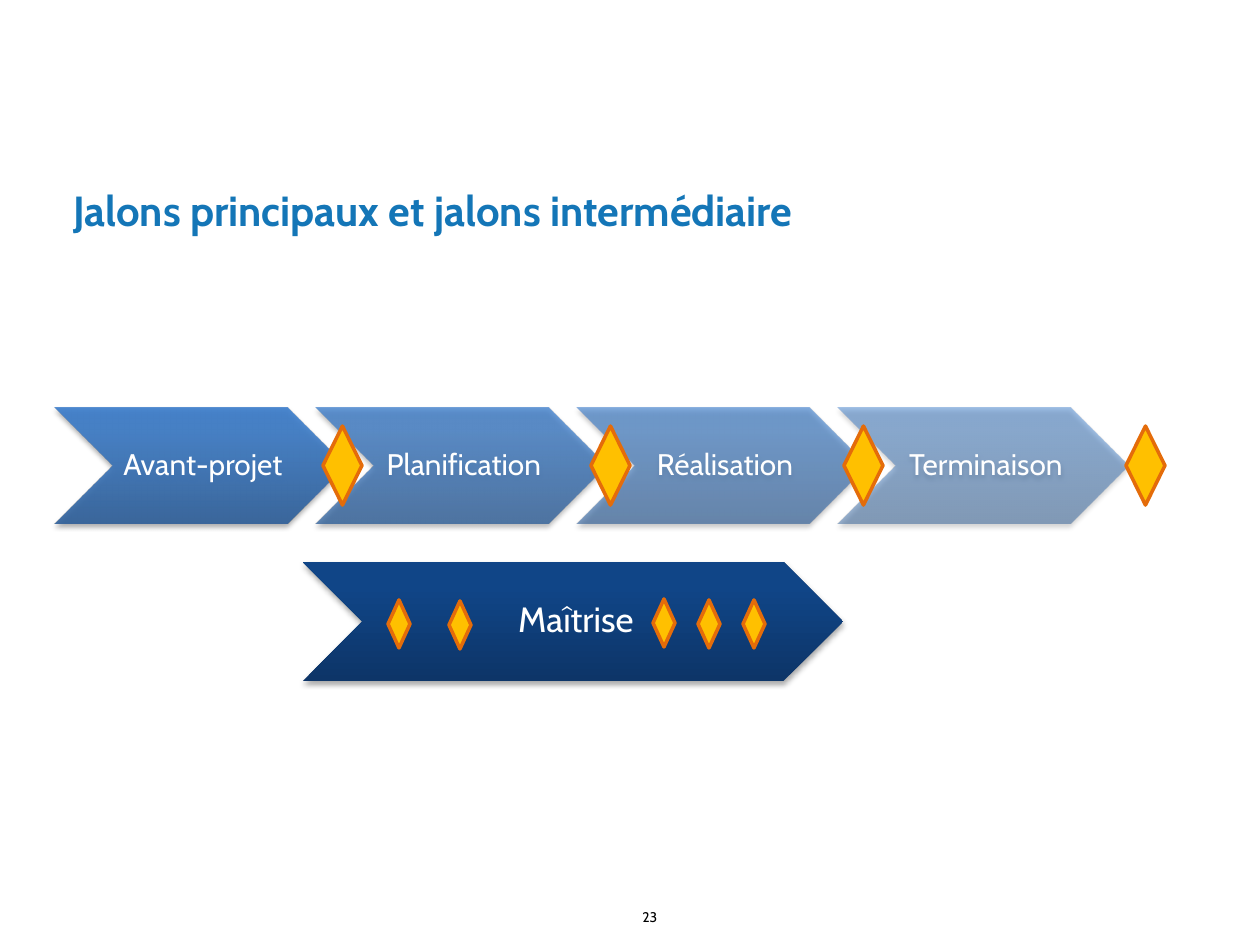
import dataclasses

import lxml.etree
import pptx
import pptx.dml.color
import pptx.enum.shapes
import pptx.enum.text
import pptx.oxml.ns
import pptx.util

RGB = pptx.dml.color.RGBColor
SHAPE = pptx.enum.shapes.MSO_SHAPE
ALIGN = pptx.enum.text.PP_ALIGN
MIDDLE = pptx.enum.text.MSO_ANCHOR.MIDDLE
qn = pptx.oxml.ns.qn

FONT = "Cabin"
WHITE = RGB(0xFF, 0xFF, 0xFF)
BLACK = RGB(0x00, 0x00, 0x00)
TITLE = RGB(0x14, 0x76, 0xB7)
GOLD = RGB(0xFF, 0xC0, 0x00)
ORANGE = RGB(0xE4, 0x6C, 0x0A)
BLUE = ((0, RGB(0x2F, 0x5F, 0x99)), (80, RGB(0x3D, 0x7C, 0xC7)),
        (100, RGB(0x3A, 0x7C, 0xCB)))
NAVY = ((0, RGB(0x0D, 0x35, 0x68)), (80, RGB(0x10, 0x45, 0x87)),
        (100, RGB(0x0E, 0x45, 0x8A)))
SCALE = 914400 / 126  # EMU in one px


@dataclasses.dataclass
class Phase:
    name: str
    box: tuple[int, int, int, int]
    stops: tuple
    alpha: int
    size: int


@dataclasses.dataclass
class Mark:
    left: int
    top: int
    width: int
    height: int


def px(num: int) -> int:
    return round(num * SCALE)


def add_color(node, tone: RGB, alpha: int) -> None:
    clr = lxml.etree.SubElement(node, qn("a:srgbClr"), val=str(tone))
    lxml.etree.SubElement(clr, qn("a:alpha"), val=str(alpha * 1000))


def add_shadow(effects) -> None:
    pt = pptx.util.Pt
    shade = lxml.etree.SubElement(
        effects, qn("a:outerShdw"), blurRad=str(pt(3.1)), dist=str(pt(1.8)),
        dir="5400000", rotWithShape="0")
    add_color(shade, BLACK, 35)


def add_run(frame, text: str, size: int, tone: RGB, bold: bool = False):
    run = frame.paragraphs[0].add_run()
    run.text = text
    run.font.size = pptx.util.Pt(size)
    run.font.bold = bold
    run.font.color.rgb = tone
    run.font.name = FONT
    return run


def set_inset(frame, left: int, rest: int) -> None:
    frame.margin_left = px(left)
    frame.margin_top = frame.margin_right = frame.margin_bottom = px(rest)


def draw_phase(slide, phase: Phase) -> None:
    shape = slide.shapes.add_shape(SHAPE.CHEVRON, *map(px, phase.box))
    shape.fill.gradient()
    shape.fill.gradient_angle = 90
    props = shape._element.spPr
    stops = props.find(".//" + qn("a:gsLst"))
    for old in list(stops):
        stops.remove(old)
    for pos, tone in phase.stops:
        stop = lxml.etree.SubElement(stops, qn("a:gs"), pos=str(pos * 1000))
        add_color(stop, tone, phase.alpha)
    shape.line.fill.background()
    shape.shadow.inherit = False
    add_shadow(props.find(qn("a:effectLst")))

    frame = shape.text_frame
    frame.word_wrap = True
    frame.vertical_anchor = MIDDLE
    set_inset(frame, 9, 3)
    frame.paragraphs[0].alignment = ALIGN.CENTER
    frame.paragraphs[0].line_spacing = 0.9
    add_run(frame, phase.name, phase.size, WHITE)


def draw_mark(slide, mark: Mark) -> None:
    shape = slide.shapes.add_shape(
        SHAPE.FLOWCHART_DECISION, *map(px, dataclasses.astuple(mark)))
    shape.fill.solid()
    shape.fill.fore_color.rgb = GOLD
    shape.line.color.rgb = ORANGE
    shape.line.width = pptx.util.Pt(2)
    shape.shadow.inherit = False


def draw_title(slide, text: str) -> None:
    title = slide.shapes.title
    title.left, title.top, title.width, title.height = map(
        px, (54, 155, 1227, 110))
    frame = title.text_frame
    frame.word_wrap = True
    frame.vertical_anchor = MIDDLE
    set_inset(frame, 19, 19)
    frame.paragraphs[0].alignment = ALIGN.LEFT
    run = add_run(frame, text, 24, TITLE, True)
    effects = lxml.etree.Element(qn("a:effectLst"))
    run.font._element.find(qn("a:solidFill")).addnext(effects)
    add_shadow(effects)


def draw_number(slide, text: str) -> None:
    box = slide.shapes.add_textbox(*map(px, (630, 902, 412, 30)))
    box.text_frame.word_wrap = True
    add_run(box.text_frame, text, 8, BLACK)


def main() -> None:
    deck = pptx.Presentation()
    deck.slide_width, deck.slide_height = px(1260), px(945)
    slide = deck.slides.add_slide(deck.slide_layouts[5])
    draw_title(slide, "Jalons principaux et jalons intermédiaire")

    # Project phases, each paler than the one before
    names = ("Avant-projet", "Planification", "Réalisation", "Terminaison")
    for step, (name, alpha) in enumerate(zip(names, (90, 77, 63, 50))):
        box = (55 + 261 * step, 408, 290, 116)
        draw_phase(slide, Phase(name, box, BLUE, alpha, 17))
    draw_phase(slide, Phase("Maîtrise", (303, 562, 540, 119), NAVY, 100, 20))

    # Main milestones
    for left in (323, 591, 844, 1126):
        draw_mark(slide, Mark(left, 426, 39, 79))

    # Intermediate milestones
    for left, top in ((388, 600), (449, 601), (653, 599), (698, 600),
                      (743, 600)):
        draw_mark(slide, Mark(left, top, 22, 48))

    draw_number(slide, "23")
    deck.save("out.pptx")


if __name__ == "__main__":
    main()
